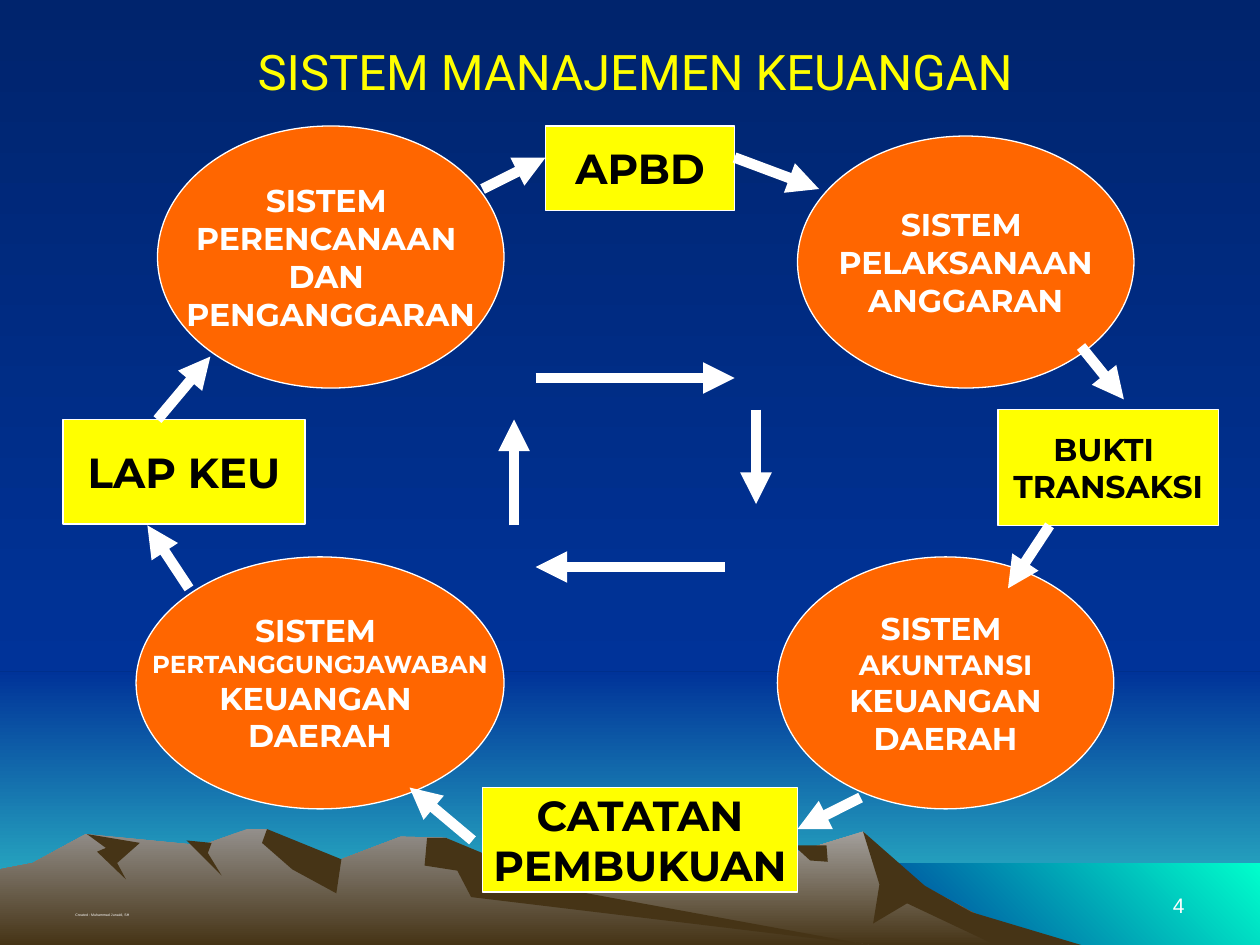
from dataclasses import dataclass

from lxml.etree import SubElement
from pptx import Presentation
from pptx.dml.color import RGBColor
from pptx.enum.shapes import MSO_CONNECTOR, MSO_SHAPE
from pptx.enum.text import MSO_ANCHOR, PP_ALIGN
from pptx.oxml.ns import qn
from pptx.util import Pt

PX = 9144  # EMU in one px, 100 px to the inch


@dataclass(frozen=True)
class Theme:
    night: str = "00246D"
    blue: str = "003399"
    horizon: str = "33CCCC"
    sea: str = "00FFCC"
    rock: str = "463416"
    rock_far: str = "A5A29F"
    rock_near: str = "938F8B"
    system: str = "FF6600"
    report: str = "FFFF00"
    white: str = "FFFFFF"
    black: str = "000000"
    title_font: str = "Roboto"
    label_font: str = "Montserrat"
    note_font: str = "Arial"
    title: int = 28
    large: int = 24
    label: int = 18
    medium: int = 16
    small: int = 14
    number: int = 12
    credit: int = 2
    outline: float = 0.75
    arrow: int = 6


THEME = Theme()
FAR, NEAR, SHADE = (THEME.rock_far, THEME.rock), (THEME.rock_near, THEME.rock), (THEME.rock,)

# Mountain outlines, back to front: fill colours and corner points
MOUNTAINS = [
    (FAR, [(820, 750), (723, 698), (685, 660), (566, 697), (471, 658), (355, 698), (258, 750)]),
    (SHADE, [(685, 660), (698, 702), (693, 733), (720, 717), (790, 750), (858, 750),
             (771, 724), (734, 703)]),
    (SHADE, [(630, 671), (643, 683), (657, 684), (656, 671)]),
    (NEAR, [(0, 750), (0, 690), (26, 685), (68, 662), (160, 671), (196, 658), (212, 658),
            (236, 681), (271, 682), (318, 664), (354, 665), (432, 712), (690, 750)]),
    (SHADE, [(212, 658), (208, 669), (232, 690), (267, 709), (271, 682)]),
    (SHADE, [(339, 665), (337, 687), (363, 691), (374, 712), (690, 750), (455, 707),
             (354, 665)]),
    (SHADE, [(148, 667), (176, 695), (165, 677), (168, 669)]),
    (SHADE, [(69, 662), (84, 673), (77, 676), (100, 698), (93, 685), (111, 669)]),
]

# Cycle parts, relative to the cycle's box; a line is a text, or a text with its own size
SYSTEMS = [
    ((75, 0, 275, 208), ["SISTEM ", "PERENCANAAN ", "DAN ", "PENGANGGARAN"]),
    ((583, 8, 267, 200), ["SISTEM ", "PELAKSANAAN", "ANGGARAN"]),
    ((567, 342, 267, 200),
     ["SISTEM ", ("AKUNTANSI", THEME.medium), "KEUANGAN", "DAERAH"]),
    ((58, 342, 292, 200),
     ["SISTEM ", ("PERTANGGUNGJAWABAN", THEME.small), "KEUANGAN ", "DAERAH"]),
]
REPORTS = [
    ((383, 0, 150, 67), [("APBD", THEME.large)]),
    ((742, 225, 175, 92), ["BUKTI ", "TRANSAKSI"]),
    ((333, 525, 250, 83), [("CATATAN", THEME.large), ("PEMBUKUAN", THEME.large)]),
    ((0, 233, 192, 83), [("LAP KEU", THEME.large)]),
]
ARROWS = [  # outer ring, then inner ring, both clockwise
    (333, 50, 383, 25), (533, 25, 600, 50), (808, 175, 842, 217), (783, 317, 750, 367),
    (633, 533, 583, 558), (325, 567, 275, 525), (100, 367, 67, 317), (75, 233, 117, 183),
    (375, 200, 533, 200), (550, 225, 550, 300), (525, 350, 375, 350), (358, 317, 358, 233),
]


def emu(*lengths):
    return [length * PX for length in lengths]


def rgb(color):
    return RGBColor.from_string(color)


def paint(fill, colors, angle=270):
    """Fill with one colour, or with a gradient of two (270 runs downwards)."""
    if len(colors) == 1:
        fill.solid()
        fill.fore_color.rgb = rgb(colors[0])
        return
    fill.gradient()
    fill.gradient_angle = angle
    for stop, color in zip(fill.gradient_stops, colors):
        stop.color.rgb = rgb(color)


def paint_scenery(shape, colors, angle=270):
    shape.shadow.inherit = False
    shape.line.fill.background()
    paint(shape.fill, colors, angle)


def write(frame, lines, font, color, align, anchor, bold=False, wrap=True):
    frame.word_wrap = wrap
    frame.vertical_anchor = anchor
    for index, line in enumerate(lines):
        text, size = (line, THEME.label) if isinstance(line, str) else line
        para = frame.add_paragraph() if index else frame.paragraphs[0]
        para.text = text
        para.alignment = align
        para.font.name, para.font.size, para.font.bold = font, Pt(size), bold
        para.font.color.rgb = rgb(color)


def add_scenery(page, box):
    left, top, width, height = box
    skyline, shore_x, shore_y = 533, 683, 685
    # Lower sky, upper sky and sea
    for x, y, bottom, colors, angle in [
        (0, skyline, height, (THEME.blue, THEME.horizon), 270),
        (0, 0, skyline, (THEME.night, THEME.blue), 270),
        (shore_x, shore_y, height, (THEME.blue, THEME.sea), 45),
    ]:
        band = page.shapes.add_shape(
            MSO_SHAPE.RECTANGLE, *emu(left + x, top + y, width - x, bottom - y))
        paint_scenery(band, colors, angle)
    # Mountains
    for colors, points in MOUNTAINS:
        builder = page.shapes.build_freeform(*points[0], scale=PX)
        builder.add_line_segments(points[1:], close=True)
        paint_scenery(builder.convert_to_shape(*emu(left, top)), colors)


def add_footer(page, box):
    left, top, width, height = box
    column = 233
    for x, text, size, align in [
        (left, "Created : Muhammad Junaidi, SH", THEME.credit, PP_ALIGN.LEFT),
        (left + width - column, "4", THEME.number, PP_ALIGN.RIGHT),
    ]:
        note = page.shapes.add_textbox(*emu(x, top, column, height))
        write(note.text_frame, [(text, size)], THEME.note_font, THEME.white, align,
              MSO_ANCHOR.BOTTOM)


def add_title(page, box):
    title = page.shapes.title
    title.left, title.top, title.width, title.height = emu(*box)
    write(title.text_frame, [("SISTEM MANAJEMEN KEUANGAN", THEME.title)], THEME.title_font,
          THEME.report, PP_ALIGN.CENTER, MSO_ANCHOR.MIDDLE)
    title._element.getparent().append(title._element)  # bring in front of the scenery


def add_cycle(page, box):
    left, top = box[:2]
    # Systems and the reports between them
    for kind, parts, fill, ink in [
        (MSO_SHAPE.OVAL, SYSTEMS, THEME.system, THEME.white),
        (MSO_SHAPE.RECTANGLE, REPORTS, THEME.report, THEME.black),
    ]:
        for (x, y, wide, high), lines in parts:
            node = page.shapes.add_shape(kind, *emu(left + x, top + y, wide, high))
            node.shadow.inherit = False
            paint(node.fill, [fill])
            node.line.color.rgb = rgb(THEME.white)
            node.line.width = Pt(THEME.outline)
            write(node.text_frame, lines, THEME.label_font, ink, PP_ALIGN.CENTER,
                  MSO_ANCHOR.MIDDLE, bold=True, wrap=False)
    # Arrows
    for x1, y1, x2, y2 in ARROWS:
        arrow = page.shapes.add_connector(
            MSO_CONNECTOR.STRAIGHT, *emu(left + x1, top + y1, left + x2, top + y2))
        arrow.line.color.rgb = rgb(THEME.white)
        arrow.line.width = Pt(THEME.arrow)
        SubElement(arrow.line._get_or_add_ln(), qn("a:tailEnd"), type="triangle")
        SubElement(arrow._element.spPr, qn("a:effectLst"))


def main():
    deck = Presentation()
    deck.slide_width, deck.slide_height = emu(1000, 750)
    page = deck.slides.add_slide(deck.slide_layouts.get_by_name("Title Only"))
    paint(page.background.fill, (THEME.night, THEME.blue))
    add_scenery(page, (0, 0, 1000, 750))
    add_footer(page, (50, 683, 900, 50))
    add_title(page, (83, 25, 842, 62))
    add_cycle(page, (50, 100, 917, 608))
    deck.save("out.pptx")


if __name__ == "__main__":
    main()
